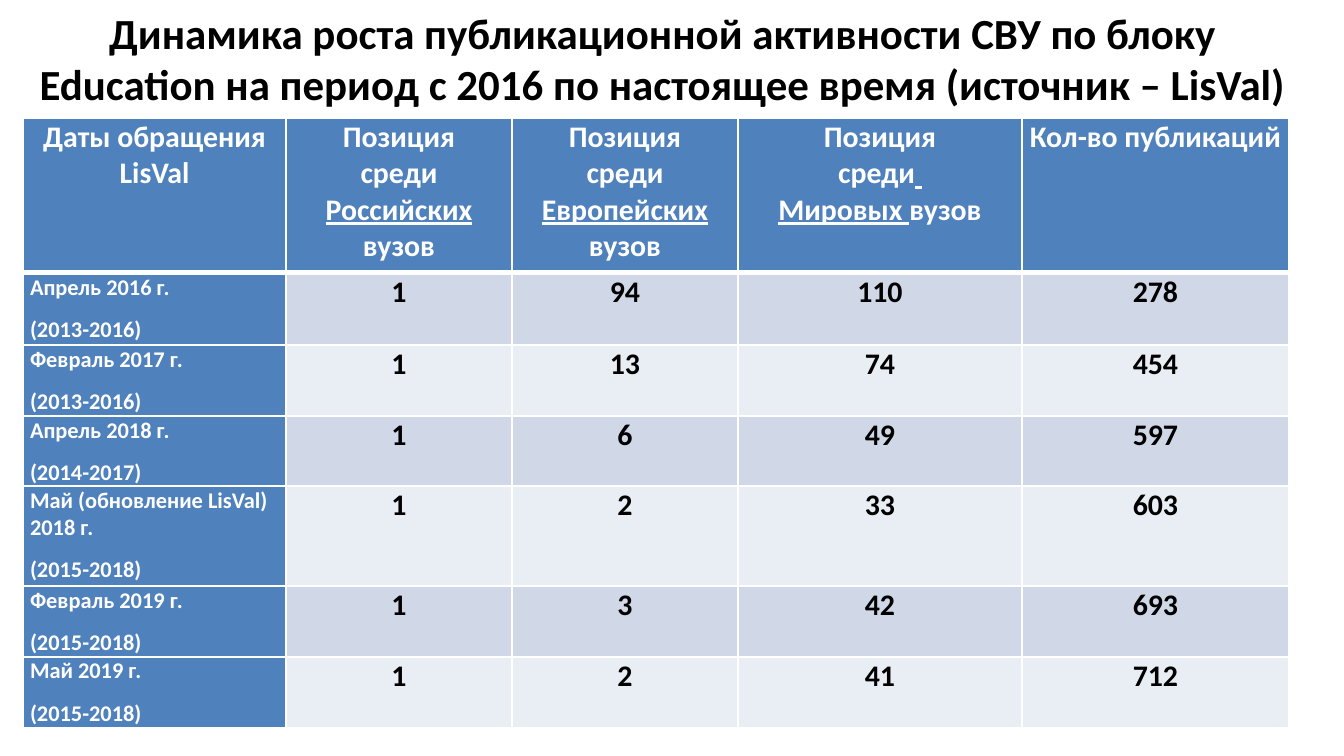
"""Build a slide with a table of publication growth by date."""
from lxml import etree
from pptx import Presentation
from pptx.dml.color import RGBColor
from pptx.enum.text import MSO_AUTO_SIZE, PP_ALIGN
from pptx.oxml.ns import qn
from pptx.util import Emu, Pt

CENTER, LEFT = PP_ALIGN.CENTER, PP_ALIGN.LEFT
GROW = MSO_AUTO_SIZE.SHAPE_TO_FIT_TEXT
WHITE = RGBColor(0xFF, 0xFF, 0xFF)
BLACK = RGBColor(0x00, 0x00, 0x00)
BLUE = RGBColor(0x4F, 0x81, 0xBD)
BANDS = RGBColor(0xD0, 0xD8, 0xE8), RGBColor(0xE9, 0xED, 0xF4)
FONT = "Calibri"
SCALE = 914400 / 134.4

TITLE = ("Динамика роста публикационной активности СВУ по блоку Education "
         "на период с 2016 по настоящее время (источник – LisVal)")
COLS = 263, 226, 226, 284, 267
ROWS = 155, 72, 71, 70, 100, 71, 71
HEADS = (
    ["Даты обращения LisVal"],
    ["Позиция", "среди| Российских |вузов"],
    ["Позиция", "среди| Европейских |вузов"],
    ["Позиция", "среди| ", "|Мировых |вузов"],
    ["Кол-во публикаций"],
)
DATA = (
    ("Апрель 2016 г.", "(2013-2016)", 1, 94, 110, 278),
    ("Февраль 2017 г.", "(2013-2016)", 1, 13, 74, 454),
    ("Апрель 2018 г.", "(2014-2017)", 1, 6, 49, 597),
    ("Май (обновление LisVal) 2018 г.", "(2015-2018)", 1, 2, 33, 603),
    ("Февраль 2019 г.", "(2015-2018)", 1, 3, 42, 693),
    ("Май 2019 г.", "(2015-2018)", 1, 2, 41, 712),
)


def px(n):
    """Turn pixels into EMU."""
    return Emu(round(n * SCALE))


def write(frame, lines, size=16, color=WHITE, align=CENTER, after=0):
    """Write bold paragraphs, underlining every second part between bars."""
    for i, line in enumerate(lines):
        para = frame.paragraphs[0] if i == 0 else frame.add_paragraph()
        para.alignment = align
        para.space_after = Pt(after)
        for j, part in enumerate(line.split("|")):
            if part:
                run = para.add_run()
                run.text = part
                font = run.font
                font.name, font.size, font.bold = FONT, Pt(size), True
                font.underline = j % 2 == 1
                font.color.rgb = color


def edge(cell, side, width):
    """Draw one white border of a cell."""
    line = etree.SubElement(cell._tc.get_or_add_tcPr(), qn(f"a:ln{side}"),
                            w=str(Pt(width)))
    fill = etree.SubElement(line, qn("a:solidFill"))
    etree.SubElement(fill, qn("a:srgbClr"), val=str(WHITE))


def fill_cell(cell, lines, fill, top=1, base=1, **style):
    """Set the margins, borders, fill and text of a cell."""
    cell.margin_left = cell.margin_right = px(7)
    cell.margin_top, cell.margin_bottom = px(1), px(0)
    for side, width in zip("LRTB", (1, 1, top, base)):
        edge(cell, side, width)
    cell.fill.solid()
    cell.fill.fore_color.rgb = fill
    write(cell.text_frame, lines, **style)


def add_title(slide):
    """Add the heading above the table."""
    frame = slide.shapes.add_textbox(px(23), px(0), px(1281), px(118)).text_frame
    frame.word_wrap = True
    frame.auto_size = GROW
    write(frame, [TITLE], size=23, color=BLACK)


def add_grid(slide):
    """Add the table with its header, dates and values."""
    table = slide.shapes.add_table(len(ROWS), len(COLS), px(23), px(118),
                                   px(sum(COLS)), px(sum(ROWS))).table
    for col, width in zip(table.columns, COLS):
        col.width = px(width)
    for row, height in zip(table.rows, ROWS):
        row.height = px(height)
    for c, lines in enumerate(HEADS):
        fill_cell(table.cell(0, c), lines, BLUE, base=3)
    for r, (date, span, *nums) in enumerate(DATA, 1):
        top = 3 if r == 1 else 1
        fill_cell(table.cell(r, 0), [date, span], BLUE, top=top,
                  size=12, align=LEFT, after=8)
        for c, num in enumerate(nums, 1):
            fill_cell(table.cell(r, c), [str(num)], BANDS[(r - 1) % 2],
                      top=top, color=BLACK, after=8)


def main():
    """Build and save the slide."""
    deck = Presentation()
    deck.slide_width, deck.slide_height = px(1344), px(756)
    slide = deck.slides.add_slide(deck.slide_layouts[6])
    add_title(slide)
    add_grid(slide)
    deck.save("out.pptx")


if __name__ == "__main__":
    main()
